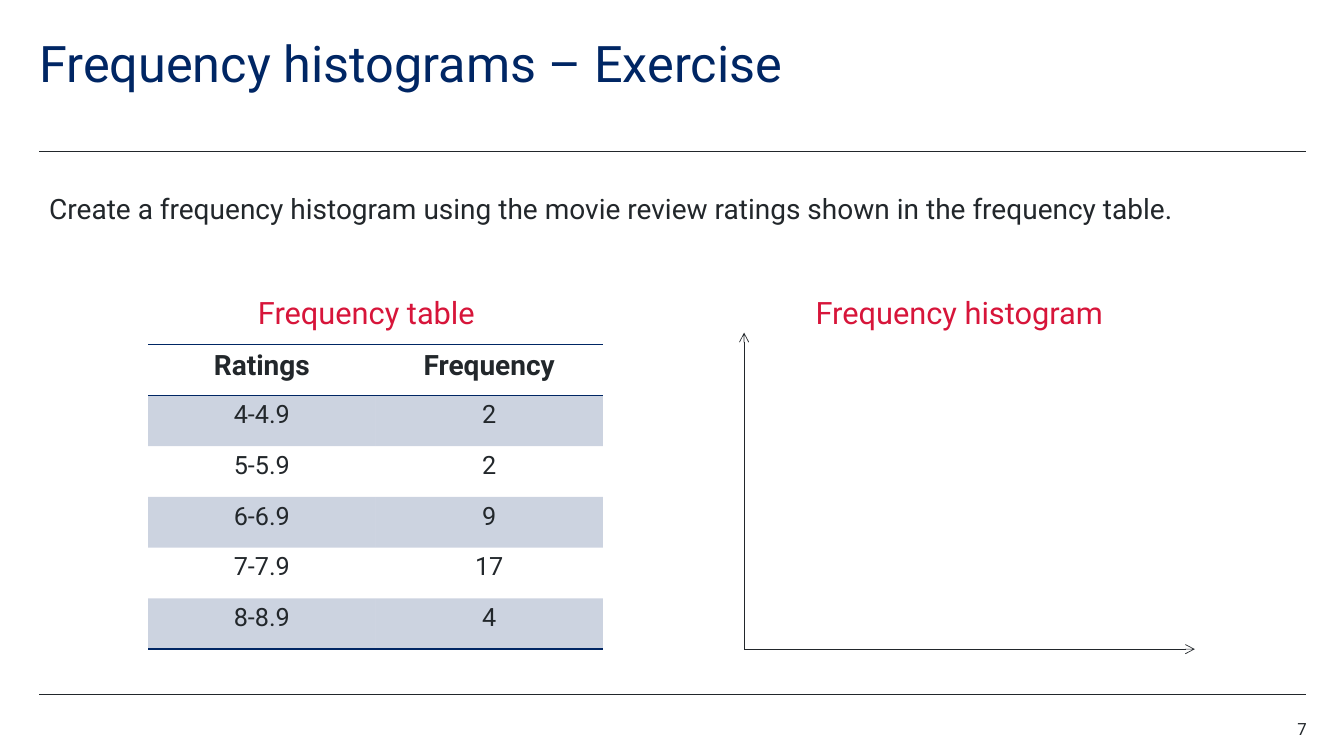
import dataclasses

import pptx
import pptx.dml.color
import pptx.enum.shapes
import pptx.enum.text
import pptx.oxml
import pptx.oxml.ns
import pptx.util

EMU_PER_PX = 9144  # 100 px to the inch
ALIGN = pptx.enum.text.PP_ALIGN
NO_TABLE_STYLE = "{2D5ABB26-0587-4C30-8999-92F81FD0307C}"

RATINGS = [
    ("Ratings", "Frequency"),
    ("4-4.9", "2"),
    ("5-5.9", "2"),
    ("6-6.9", "9"),
    ("7-7.9", "17"),
    ("8-8.9", "4"),
]


@dataclasses.dataclass(frozen=True)
class Theme:
    font: str = "Roboto"
    navy: str = "002664"
    ink: str = "22272B"
    red: str = "D7153A"
    title: int = 36
    heading: int = 22
    body: int = 20
    cell: int = 18
    page: int = 12
    rule: float = 0.5
    border: float = 1
    band_opacity: int = 20


THEME = Theme()


def px(length):
    return pptx.util.Emu(length * EMU_PER_PX)


def rgb(colour):
    return pptx.dml.color.RGBColor.from_string(colour)


def add_xml(parent, tag, index=None, content="", **attributes):
    """Put a new DrawingML element into parent, last unless an index is given."""
    listed = " ".join(f'{name}="{value}"' for name, value in attributes.items())
    element = pptx.oxml.parse_xml(
        f'<a:{tag} {pptx.oxml.ns.nsdecls("a")} {listed}>{content}</a:{tag}>')
    parent.insert(len(parent) if index is None else index, element)


def write(frame, text, size, colour, align=ALIGN.LEFT, bold=False):
    frame.text = text
    paragraph = frame.paragraphs[0]
    paragraph.alignment = align
    font = paragraph.runs[0].font
    font.name = THEME.font
    font.size = pptx.util.Pt(size)
    font.color.rgb = rgb(colour)
    font.bold = bold
    return paragraph


def remove_margins(frame):
    frame.margin_left = frame.margin_top = 0
    frame.margin_right = frame.margin_bottom = 0


def set_title(slide, text):
    title = slide.shapes.title
    title.left, title.top, title.width, title.height = map(px, (39, 39, 1102, 60))
    frame = title.text_frame
    remove_margins(frame)
    frame.vertical_anchor = pptx.enum.text.MSO_ANCHOR.TOP
    frame.auto_size = pptx.enum.text.MSO_AUTO_SIZE.NONE
    write(frame, text, THEME.title, THEME.navy).line_spacing = 0.9


def add_text(slide, text, box, size, colour, space_after):
    frame = slide.shapes.add_textbox(*map(px, box)).text_frame
    frame.word_wrap = True
    paragraph = write(frame, text, size, colour)
    paragraph.line_spacing = 1.5
    paragraph.space_after = pptx.util.Pt(space_after)


def add_page_number(slide, number):
    frame = slide.shapes.add_textbox(*map(px, (1217, 713, 79, 20))).text_frame
    frame.word_wrap = True
    remove_margins(frame)
    write(frame, number, THEME.page, THEME.ink, ALIGN.RIGHT)


def add_line(shapes, start, end):
    line = shapes.add_connector(
        pptx.enum.shapes.MSO_CONNECTOR.STRAIGHT, *map(px, start + end))
    line.line.color.rgb = rgb(THEME.ink)
    line.line.width = pptx.util.Pt(THEME.rule)
    add_xml(line._element.spPr, "effectLst")
    return line


def add_axes(slide, origin, top, right):
    axes = slide.shapes.add_group_shape()
    for tip in ((origin[0], top), (right, origin[1])):
        axis = add_line(axes.shapes, tip, origin)
        add_xml(axis.line._get_or_add_ln(), "headEnd", type="arrow")


def add_border(cell, side):
    colour = f'<a:solidFill><a:srgbClr val="{THEME.navy}"/></a:solidFill>'
    add_xml(cell._tc.get_or_add_tcPr(), side, index=0, content=colour,
            w=pptx.util.Pt(THEME.border))


def fill_band(cell):
    cell.fill.solid()
    cell.fill.fore_color.rgb = rgb(THEME.navy)
    tint = cell._tc.tcPr.find(".//" + pptx.oxml.ns.qn("a:srgbClr"))
    add_xml(tint, "alpha", val=THEME.band_opacity * 1000)


def add_frequency_table(slide, rows, box):
    table = slide.shapes.add_table(len(rows), len(rows[0]), *map(px, box)).table
    table.horz_banding = False
    table._tbl.tblPr.find(pptx.oxml.ns.qn("a:tableStyleId")).text = NO_TABLE_STYLE
    for row, values in enumerate(rows):
        header = row == 0
        for column, value in enumerate(values):
            cell = table.cell(row, column)
            write(cell.text_frame, value, THEME.body if header else THEME.cell,
                  THEME.ink, ALIGN.CENTER, header)
            if row % 2:
                fill_band(cell)
            else:
                cell.fill.background()
            if header or row == len(rows) - 1:
                add_border(cell, "lnB")
            if header:
                add_border(cell, "lnT")


def main():
    deck = pptx.Presentation()
    deck.slide_width, deck.slide_height = px(1333), px(750)
    slide = deck.slides.add_slide(deck.slide_layouts.get_by_name("Title Only"))

    for rule_y in (150, 689):
        add_line(slide.shapes, (39, rule_y), (1295, rule_y))
    set_title(slide, "Frequency histograms – Exercise")
    add_text(slide, "Create a frequency histogram using the movie review ratings "
             "shown in the frequency table.",
             (39, 168, 1220, 46), THEME.body, THEME.ink, 12)
    add_text(slide, "Frequency table", (246, 268, 254, 46),
             THEME.heading, THEME.red, 12)
    add_frequency_table(slide, RATINGS, (147, 342, 451, 302))
    add_text(slide, "Frequency histogram", (799, 268, 325, 46),
             THEME.heading, THEME.red, 6)
    add_axes(slide, origin=(738, 644), top=330, right=1185)
    add_page_number(slide, "7")
    deck.save("out.pptx")


if __name__ == "__main__":
    main()
